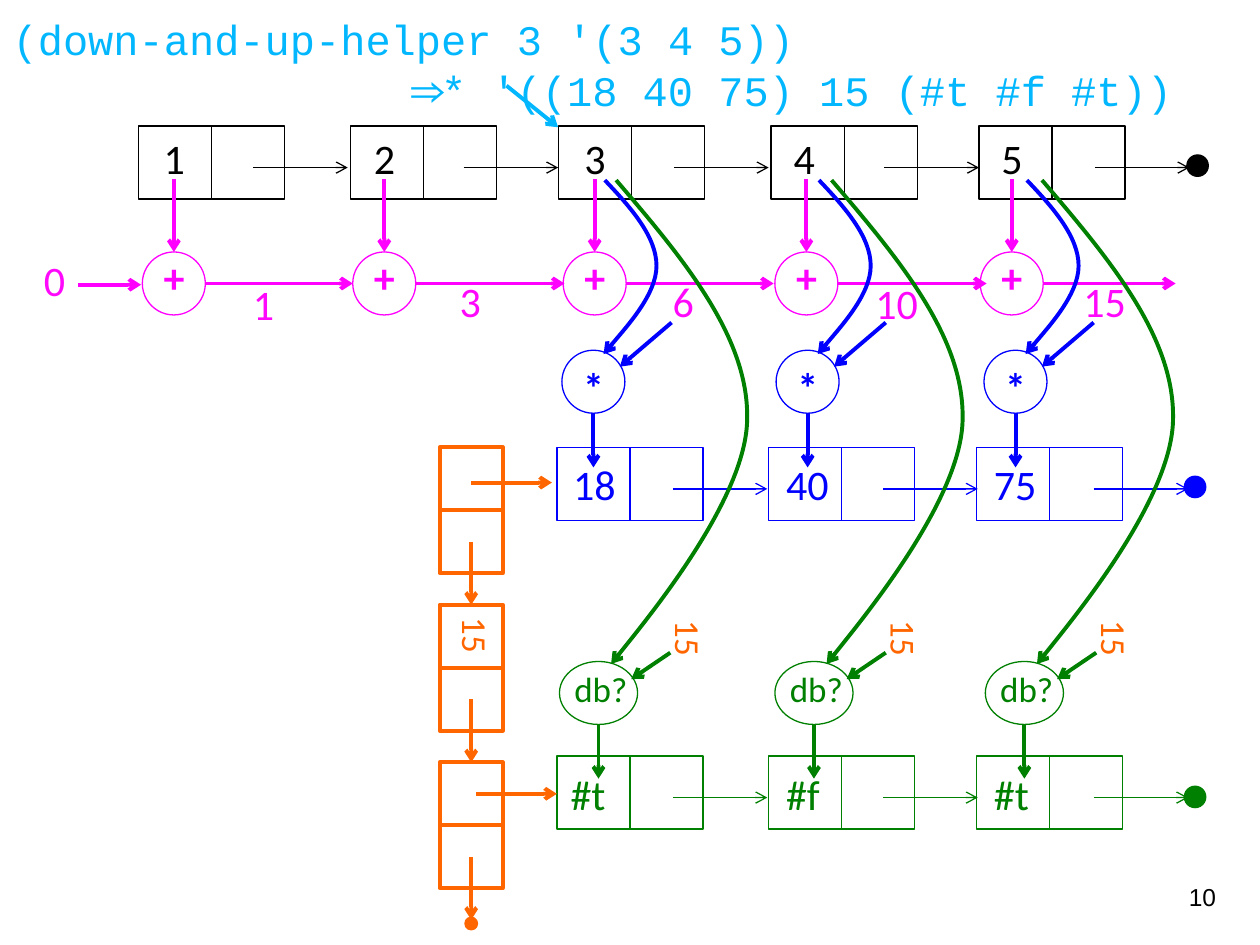
"""Build the slide that traces down-and-up-helper on a list of numbers."""
from pptx import Presentation
from pptx.dml.color import RGBColor
from pptx.enum.shapes import MSO_CONNECTOR as Link, MSO_SHAPE as Kind
from pptx.enum.text import MSO_ANCHOR as Anchor, MSO_AUTO_SIZE as Fit, PP_ALIGN as Align
from pptx.oxml.ns import qn
from pptx.util import Pt
from lxml.etree import SubElement

PX = 9144
BLACK = RGBColor(0x00, 0x00, 0x00)
BLUE = RGBColor(0x00, 0x00, 0xFF)
GREEN = RGBColor(0x00, 0x80, 0x00)
ORANGE = RGBColor(0xFF, 0x66, 0x00)
MAGENTA = RGBColor(0xFF, 0x00, 0xFF)
PINK = RGBColor(0xFF, 0x08, 0xFC)
SKY = RGBColor(0x03, 0xB7, 0xFF)
THIN, THICK = 0.75, 2.25

CALL = "(down-and-up-helper 3 '(3 4 5))"
RESULT = "⇒* '((18 40 75) 15 (#t #f #t))"
RESULT_INDENT = 320

CELL, SPINE_CELL, CIRCLE = 58, 50, 50
# Each list: colour, top, label top, label width, first arrow, end dot, (left, label left, value)
LISTS = [
    (BLACK, 100, 100, 37, 201, (942, 123),
     [(110, 120, "1"), (278, 287, "2"), (443, 454, "3"), (612, 620, "4"), (777, 785, "5")]),
    (BLUE, 355, 359, 54, 534, (940, 378),
     [(442, 445, "18"), (610, 614, "40"), (775, 779, "75")]),
    (GREEN, 600, 605, 48, 534, (940, 624),
     [(442, 443, "#t"), (610, 614, "#f"), (775, 779, "#t")]),
]
ARROW_PITCH, ARROW_LENGTH = 167, 75

ADDERS = [
    (113, 280, "1", 191, 216, 37),
    (280, 448, "3", 355, 214, 37),
    (447, 614, "6", 524, 214, 37),
    (615, 783, "10", 685, 215, 54),
    (778, 933, "15", 850, 214, 54),
]
MULTIPLIER_LEFTS = [446, 616, 781]
MULTIPLIER_CURVE = [(34, 143), (55, 165), (75, 188), (75, 211), (75, 234), (33, 281), (33, 281)]
PREDICATE_LEFTS = [444, 615, 782]
PREDICATE_CURVE = [(45, 143), (98, 205), (150, 267), (149, 332), (149, 396), (41, 527), (41, 527)]
SPINE_LEFT, SPINE_TOPS = 349, [355, 480, 605]
SPINE_LINKS = [(374, 383), (378, 630)]

prs = Presentation()
prs.slide_width, prs.slide_height = 1000 * PX, 750 * PX
slide = prs.slides.add_slide(prs.slide_layouts[5])
shapes = slide.shapes


def emu(*lengths):
    return [length * PX for length in lengths]


def style_text(paragraph, size, color, font="Calibri", bold=False):
    paragraph.font.size = Pt(size)
    paragraph.font.name = font
    paragraph.font.bold = bold
    paragraph.font.color.rgb = color


def outline(part, color, weight):
    part.line.color.rgb = color
    part.line.width = Pt(weight)


def add_head(part):
    SubElement(part.line._get_or_add_ln(), qn("a:tailEnd"), type="arrow")


def preset(kind, box, color, weight=THIN, filled=False):
    part = shapes.add_shape(kind, *emu(*box))
    part.shadow.inherit = False
    if filled:
        part.fill.solid()
        part.fill.fore_color.rgb = color
    else:
        part.fill.background()
    outline(part, color, weight)


def arrow(start, end, color, weight=THICK):
    link = shapes.add_connector(Link.STRAIGHT, *emu(*start, *end))
    outline(link, color, weight)
    add_head(link)
    SubElement(link._element.spPr, qn("a:effectLst"))


def curve(points, color):
    start, *rest = [tuple(emu(*point)) for point in points]
    builder = shapes.build_freeform(*start)
    builder.add_line_segments(rest, close=False)
    part = builder.convert_to_shape()
    part.shadow.inherit = False
    part.fill.background()
    outline(part, color, THICK)
    add_head(part)
    segments = list(part._element.iter(qn("a:lnTo")))
    outline_path = segments[0].getparent()
    for first in range(0, len(segments), 3):
        bezier = SubElement(outline_path, qn("a:cubicBezTo"))
        for segment in segments[first:first + 3]:
            bezier.append(segment[0])
            outline_path.remove(segment)


def label(text, left, top, width, color, size=24, bold=False, turn=0):
    box = shapes.add_textbox(*emu(left, top, width, 50 if size == 24 else 44))
    box.rotation = turn
    box.text_frame.word_wrap = False
    box.text_frame.auto_size = Fit.SHAPE_TO_FIT_TEXT
    box.text_frame.text = text
    style_text(box.text_frame.paragraphs[0], size, color, bold=bold)


def draw_heading():
    title = shapes.title
    title.left, title.top, title.width, title.height = emu(0, 6, 1000, 84)
    frame = title.text_frame
    frame.auto_size = Fit.NONE
    frame.vertical_anchor = Anchor.TOP
    frame.text = f"{CALL}\n{RESULT}"
    for paragraph in frame.paragraphs:
        paragraph.alignment = Align.LEFT
        style_text(paragraph, 24, SKY, "Courier New")
    frame.paragraphs[1]._p.get_or_add_pPr().set("marL", str(RESULT_INDENT * PX))
    arrow((402, 68), (443, 101), SKY)


def draw_list(color, top, label_top, label_width, first_arrow, dot, pairs):
    preset(Kind.OVAL, (*dot, 17, 17), color, filled=True)
    for index, (left, label_left, value) in enumerate(pairs):
        for cell_left in (left, left + CELL):
            preset(Kind.RECTANGLE, (cell_left, top, CELL, CELL), color)
        label(value, label_left, label_top, label_width, color)
        start = first_arrow + index * ARROW_PITCH
        arrow((start, top + 33), (start + ARROW_LENGTH, top + 33), color, THIN)


def draw_spine():
    for top in SPINE_TOPS:
        for cell_top in (top, top + SPINE_CELL):
            preset(Kind.RECTANGLE, (SPINE_LEFT, cell_top, SPINE_CELL, SPINE_CELL), ORANGE, THICK)
        arrow((374, top + 75), (374, top + 125), ORANGE)
    for left, y in SPINE_LINKS:
        arrow((left, y), (left + 64, y), ORANGE)
    preset(Kind.OVAL, (369, 728, 10, 10), ORANGE, filled=True)
    label("15", 353, 483, 49, ORANGE, size=20, turn=90)


def draw_adders():
    label("0", 25, 197, 37, PINK)
    arrow((62, 226), (112, 226), MAGENTA)
    for left, end, total, total_left, total_top, width in ADDERS:
        arrow((left + 25, 142), (left + 25, 200), MAGENTA)
        label("+", left + 7, 195, 37, MAGENTA, bold=True)
        preset(Kind.OVAL, (left, 200, CIRCLE, CIRCLE), MAGENTA)
        arrow((left + CIRCLE, 225), (end, 225), MAGENTA)
        label(total, total_left, total_top, width, PINK)


def draw_operator(left, top, width, color, points, feed):
    preset(Kind.OVAL, (left, top, width, CIRCLE), color)
    middle = left + width // 2
    arrow((middle, top + CIRCLE), (middle, top + 93), color)
    curve([(left + x, y) for x, y in points], color)
    (x1, y1), (x2, y2) = feed
    arrow((left + x1, y1), (left + x2, y2), color)


def draw_page_number():
    box = shapes.add_textbox(*emu(908, 695, 67, 38))
    box.text_frame.word_wrap = True
    box.text_frame.text = "10"
    number = box.text_frame.paragraphs[0]
    number.alignment = Align.RIGHT
    style_text(number, 14, BLACK, "Arial")


draw_heading()
for linked_list in LISTS:
    draw_list(*linked_list)
draw_spine()
draw_adders()
for left in MULTIPLIER_LEFTS:
    label("*", left + 7, 282, 37, BLUE, bold=True)
    draw_operator(left, 278, CIRCLE, BLUE, MULTIPLIER_CURVE, ((87, 256), (46, 291)))
for left in PREDICATE_LEFTS:
    label("db?", left + 2, 525, 63, GREEN, size=20)
    draw_operator(left, 525, 62, GREEN, PREDICATE_CURVE, ((88, 518), (57, 539)))
    label("15", left + 78, 485, 49, ORANGE, size=20, turn=90)
draw_page_number()
prs.save("out.pptx")
